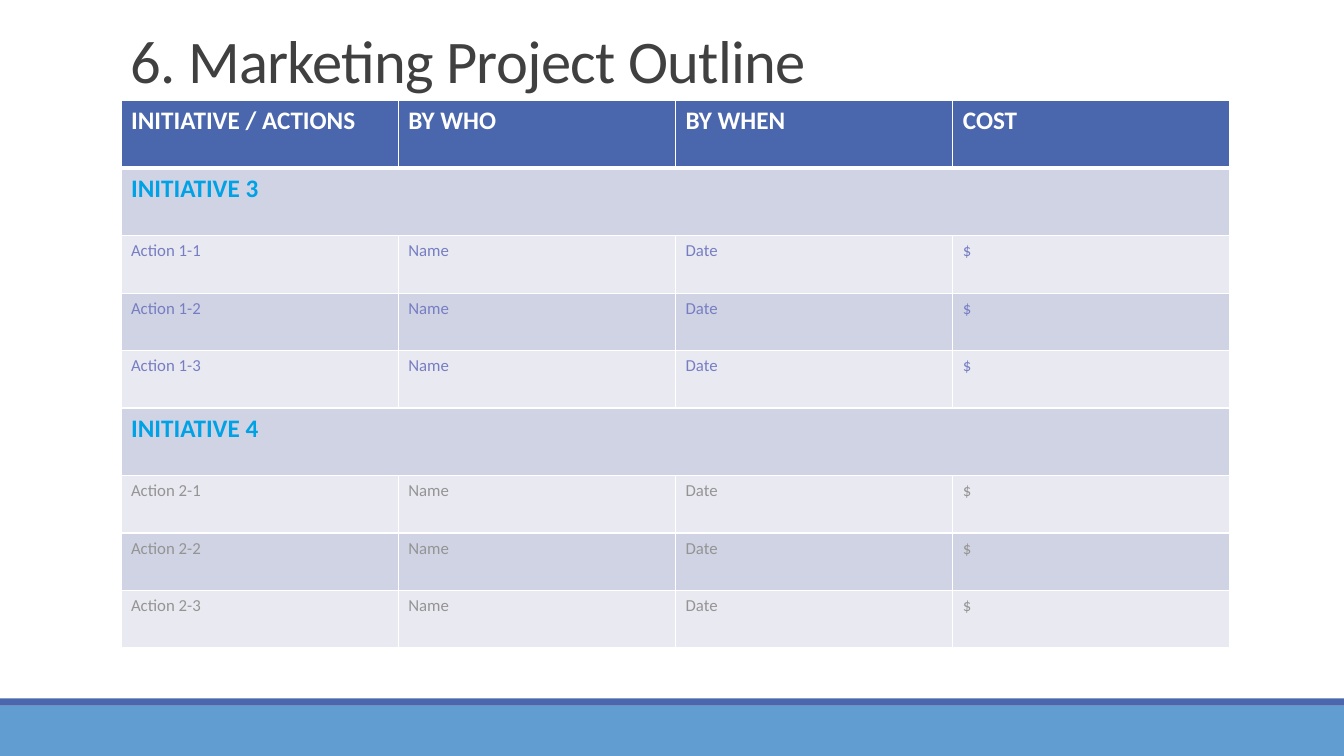
from lxml import etree
from pptx import Presentation, util as u
from pptx.dml.color import RGBColor
from pptx.enum import shapes, text
from pptx.oxml.ns import qn

THEME = {
    "font": "Calibri",
    "title": {"size": 43.2, "color": "404040", "bold": False},
    "header": {"size": 18, "color": "FFFFFF", "bold": True},
    "initiative": {"size": 18, "color": "00A2E6", "bold": True},
    "first actions": {"size": 12, "color": "777DC3", "bold": False},
    "second actions": {"size": 12, "color": "949494", "bold": False},
    "header fill": "4A66AC",
    "bands": ("E9EAF1", "D0D3E3"),
    "border": "FFFFFF",
    "footer": "629DD1",
}
WIDTH, HEIGHT = u.Inches(13.33), u.Inches(7.5)
LEFT, CONTENT_WIDTH = u.Inches(1.2), u.Inches(11)
TABLE_TOP = u.Inches(1)
TALL_ROW, ACTION_ROW = u.Inches(0.67), u.Inches(0.57)


def write(frame, words, style):
    """Put one styled run in the frame and return it."""
    run = frame.paragraphs[0].add_run()
    run.text = words
    values = {"name": THEME["font"], "size": u.Pt(style["size"]), "bold": style["bold"]}
    for name, value in values.items():
        setattr(run.font, name, value)
    run.font.color.rgb = RGBColor.from_string(style["color"])
    return run


def add_borders(cell, widths):
    """Draw cell edges; widths maps an edge tag to points."""
    properties = cell._tc.get_or_add_tcPr()
    for edge, points in widths.items():
        line = etree.SubElement(properties, qn(f"a:{edge}"), w=str(u.Pt(points)))
        fill = etree.SubElement(line, qn("a:solidFill"))
        etree.SubElement(fill, qn("a:srgbClr"), val=THEME["border"])


presentation = Presentation()
presentation.slide_width, presentation.slide_height = WIDTH, HEIGHT
slide = presentation.slides.add_slide(presentation.slide_layouts[6])

# Footer bands
for top, height, color in ((7, 0.5, THEME["footer"]), (6.93, 0.07, THEME["header fill"])):
    band = slide.shapes.add_shape(
        shapes.MSO_SHAPE.RECTANGLE, 0, u.Inches(top), WIDTH, u.Inches(height))
    band.shadow.inherit = False
    band.fill.solid()
    band.fill.fore_color.rgb = RGBColor.from_string(color)
    band.line.fill.background()

# Title
title = slide.shapes.add_textbox(LEFT, u.Inches(0.31), CONTENT_WIDTH, u.Inches(0.69))
title.text_frame.word_wrap = True
title.text_frame.vertical_anchor = text.MSO_ANCHOR.BOTTOM
title.text_frame.paragraphs[0].line_spacing = 0.85
title_run = write(title.text_frame, "6. Marketing Project Outline", THEME["title"])
title_run._r.get_or_add_rPr().set("spc", "-50")

# Outline table: a header, then two initiatives with three actions each
rows = [("header", ["INITIATIVE / ACTIONS", "BY WHO", "BY WHEN", "COST"])]
for number, style in ((1, "first actions"), (2, "second actions")):
    rows.append(("initiative", [f"INITIATIVE {number + 2}"]))
    rows += [(style, [f"Action {number}-{step}", "Name", "Date", "$"]) for step in (1, 2, 3)]

heights = [ACTION_ROW if "actions" in style else TALL_ROW for style, words in rows]
columns = len(rows[0][1])
table = slide.shapes.add_table(
    len(rows), columns, LEFT, TABLE_TOP, CONTENT_WIDTH, sum(heights)).table
for column in table.columns:
    column.width = CONTENT_WIDTH // columns

for index, (style, words) in enumerate(rows):
    table.rows[index].height = heights[index]
    fill = THEME["header fill"] if style == "header" else THEME["bands"][index % 2]
    edges = {"lnL": 1, "lnR": 1, "lnT": 3 if index == 1 else 1, "lnB": 3 if index == 0 else 1}
    for cell in table.rows[index].cells:
        add_borders(cell, edges)
        cell.fill.solid()
        cell.fill.fore_color.rgb = RGBColor.from_string(fill)
    if style == "initiative":
        table.cell(index, 0).merge(table.cell(index, columns - 1))
    for column, word in enumerate(words):
        write(table.cell(index, column).text_frame, word, THEME[style])

presentation.save("out.pptx")
